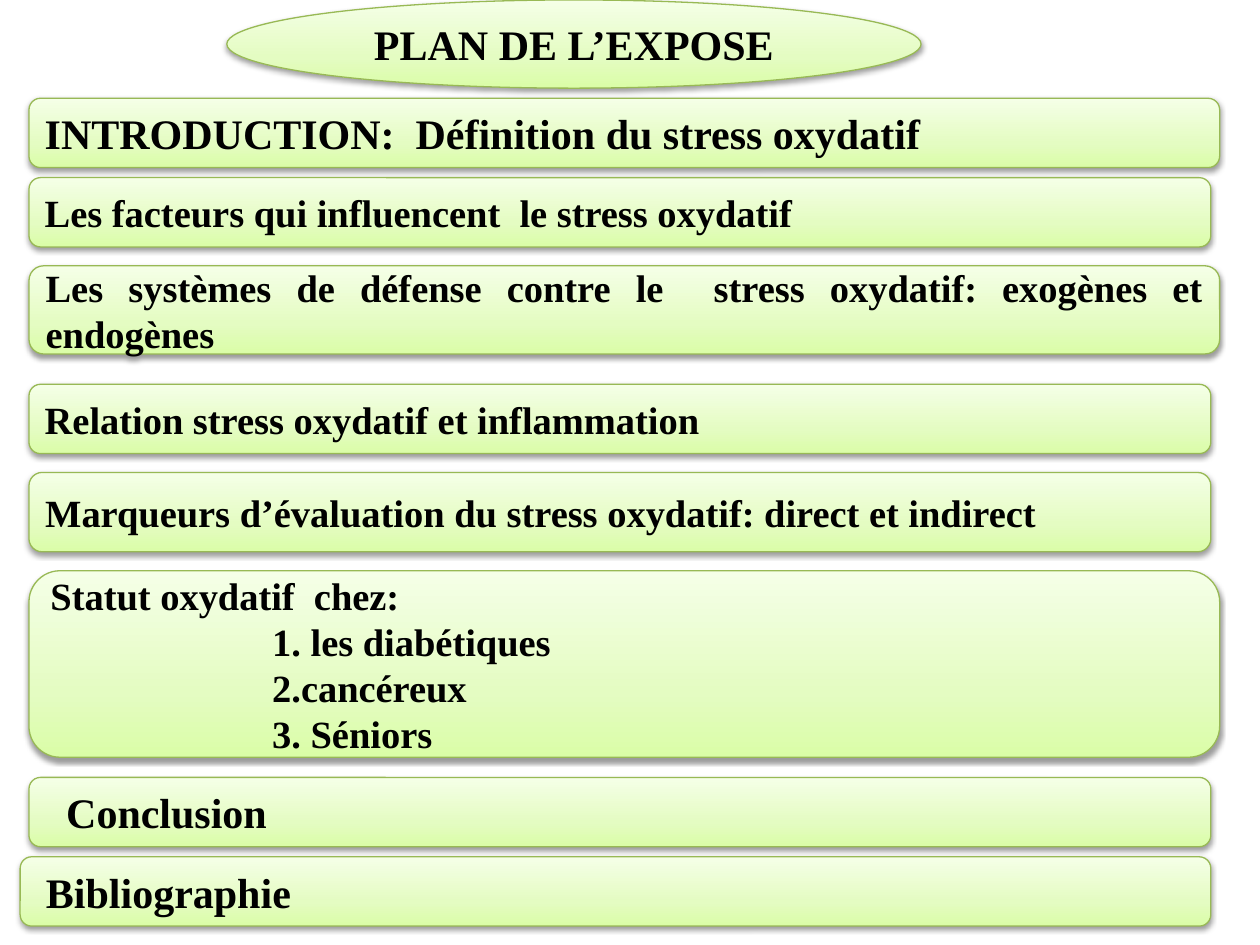
from copy import deepcopy
from dataclasses import dataclass

from lxml.etree import SubElement
from pptx import Presentation
from pptx.dml.color import RGBColor as RGB
from pptx.enum.shapes import MSO_SHAPE as SHAPE
from pptx.enum.text import MSO_ANCHOR as ANCHOR, PP_ALIGN as ALIGN
from pptx.oxml.ns import qn
from pptx.util import Inches, Pt


@dataclass(frozen=True)
class Theme:
    font: str = "Times New Roman"
    title_size: int = 24
    body_size: int = 22
    text: str = "000000"
    border: str = "98B955"
    border_width: float = 0.75
    shadow: str = "000000"
    gradient: tuple = ((0, "DAFDA7"), (0.35, "E4FCC2"), (1, "F5FFE7"))


class PlanSlide:
    def __init__(self, prs, theme):
        self.theme = theme
        self.slide = prs.slides.add_slide(prs.slide_layouts[6])

    def fill_gradient(self, sp):
        sp.fill.gradient()
        sp.fill.gradient_angle = 90
        gs_list = sp._element.spPr.find(".//" + qn("a:gsLst"))
        gs_list.insert(1, deepcopy(gs_list[0]))
        for stop, (position, color) in zip(sp.fill.gradient_stops, self.theme.gradient):
            stop.position = position
            stop.color.rgb = RGB.from_string(color)

    def add_shadow(self, sp):
        sp.shadow.inherit = False
        effects = sp._element.spPr.find(qn("a:effectLst"))
        outer = SubElement(effects, qn("a:outerShdw"), blurRad=str(Pt(3.1)),
                           dist=str(Pt(1.6)), dir="5400000", rotWithShape="0")
        color = SubElement(outer, qn("a:srgbClr"), val=self.theme.shadow)
        SubElement(color, qn("a:alpha"), val="38000")

    def panel(self, kind, box, lines, size, align):
        sp = self.slide.shapes.add_shape(kind, *map(Inches, box))
        self.fill_gradient(sp)
        sp.line.color.rgb = RGB.from_string(self.theme.border)
        sp.line.width = Pt(self.theme.border_width)
        self.add_shadow(sp)
        tf = sp.text_frame
        tf.word_wrap = True
        tf.vertical_anchor = ANCHOR.MIDDLE
        for i, (text, indent) in enumerate(lines):
            p = tf.add_paragraph() if i else tf.paragraphs[0]
            p.text = text
            p.alignment = align
            p.font.name = self.theme.font
            p.font.size = Pt(size)
            p.font.bold = True
            p.font.color.rgb = RGB.from_string(self.theme.text)
            if indent:
                p._p.get_or_add_pPr().set("marL", str(Inches(indent)))
        return sp

    def title(self, box, text):
        return self.panel(SHAPE.OVAL, box, [(text, 0)], self.theme.title_size, ALIGN.CENTER)

    def bar(self, box, lines, size):
        return self.panel(SHAPE.ROUNDED_RECTANGLE, box, lines, size, ALIGN.JUSTIFY)


def main():
    prs = Presentation()
    prs.slide_width, prs.slide_height = Inches(10), Inches(7.5)
    theme = Theme()
    s = PlanSlide(prs, theme)
    big, normal = theme.title_size, theme.body_size
    left, wide, narrow, height = 0.23, 9.45, 9.38, 0.55
    sub_indent = 1.76

    s.title((1.8, 0, 5.51, 0.7), "PLAN DE L’EXPOSE")
    sections = [
        (left, 0.78, wide, height, big,
         [("INTRODUCTION:  Définition du stress oxydatif", 0)]),
        (left, 1.41, narrow, height, normal,
         [("Les facteurs qui influencent  le stress oxydatif", 0)]),
        (left, 2.11, wide, 0.7, normal,
         [("Les systèmes de défense contre le  stress oxydatif: exogènes et endogènes", 0)]),
        (left, 3.05, narrow, height, normal,
         [("Relation stress oxydatif et inflammation", 0)]),
        (left, 3.75, narrow, 0.63, normal,
         [("Marqueurs d’évaluation du stress oxydatif: direct et indirect", 0)]),
        (left, 4.53, wide, 1.48, normal,
         [("Statut oxydatif  chez:", 0),
          ("1. les diabétiques", sub_indent),
          ("2.cancéreux", sub_indent),
          ("3. Séniors", sub_indent)]),
        (left, 6.17, narrow, height, big, [("Conclusion", 0.17)]),
        (0.16, 6.8, wide, height, big, [("Bibliographie", 0.08)]),
    ]
    for *box, size, lines in sections:
        s.bar(box, lines, size)

    prs.save("out.pptx")


if __name__ == "__main__":
    main()
